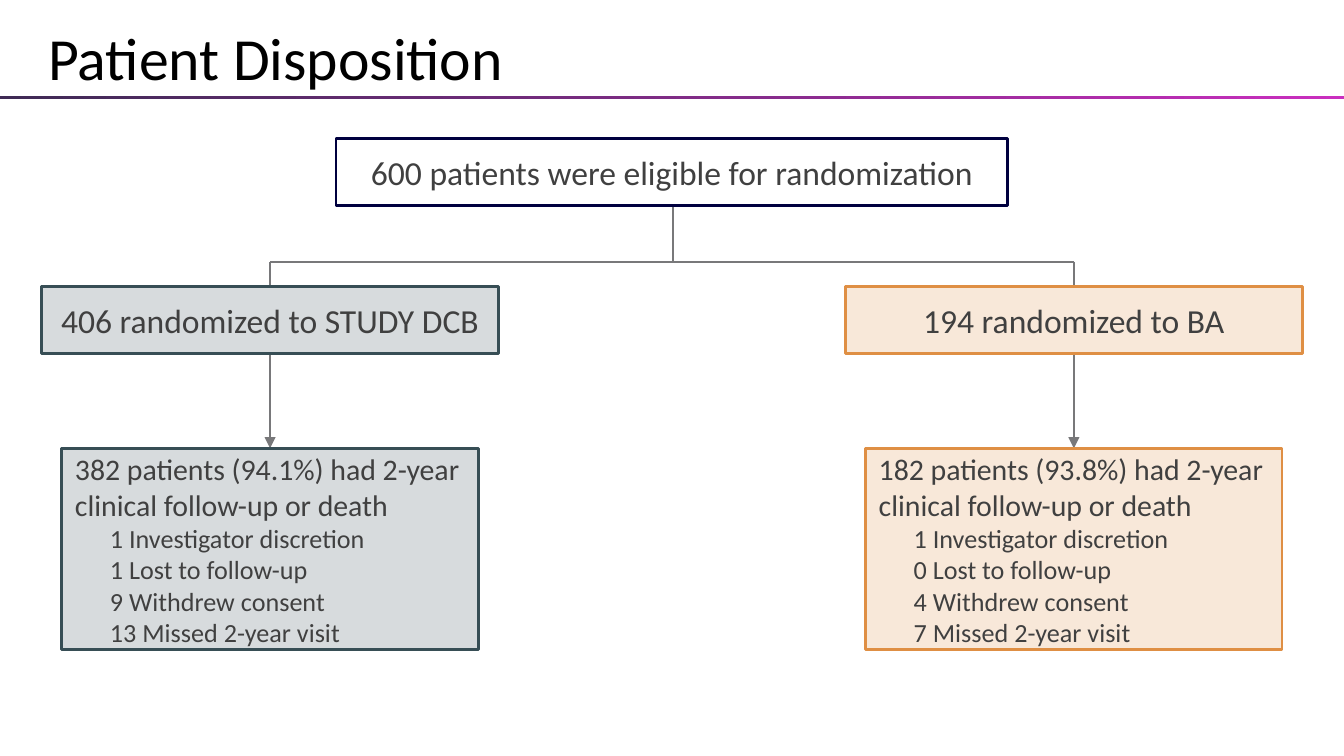
"""Builds the patient disposition flow chart slide."""
from copy import deepcopy

from pptx import Presentation
from pptx import util as u
from pptx.dml.color import RGBColor
from pptx.enum import shapes, text
from pptx.oxml import ns, xmlchemy

BLACK = RGBColor(0x00, 0x00, 0x00)
GREY_TEXT = RGBColor(0x40, 0x40, 0x40)
GREY_LINE = RGBColor(0x78, 0x78, 0x7A)
NAVY = RGBColor(0x00, 0x00, 0x3F)
SLATE = RGBColor(0x37, 0x4E, 0x55)
ORANGE = RGBColor(0xDF, 0x8F, 0x44)
RULE_STOPS = [
    (0, RGBColor(0x3F, 0x2A, 0x55)),
    (0.55, RGBColor(0x85, 0x2C, 0x8A)),
    (1, RGBColor(0xCA, 0x2E, 0xBF)),
]
WIDTH, HEIGHT = 720, 405
CENTER, ARM_OFFSET = 360, 215.3
BOX_H, TOP_Y, BRANCH_Y, ARM_Y, FOLLOW_Y = 36, 74.2, 140.2, 153.4, 240.2
ARMS = [
    (-1, SLATE, "406 randomized to STUDY DCB",
     "382 patients (94.1%) had 2-year clinical follow-up or death", (1, 1, 9, 13)),
    (1, ORANGE, "194 randomized to BA",
     "182 patients (93.8%) had 2-year clinical follow-up or death", (1, 0, 4, 7)),
]
REASONS = ("Investigator discretion", "Lost to follow-up", "Withdrew consent", "Missed 2-year visit")


def apply(target, values):
    for name, value in values.items():
        setattr(target, name, value)


class FlowSlide:
    def __init__(self, prs, font="Calibri"):
        self.s = prs.slides.add_slide(prs.slide_layouts[6])
        self.font = font

    def paragraph(self, p, wording, size, color=GREY_TEXT, indent=0, **fmt):
        if indent:
            p._p.get_or_add_pPr().set("marL", str(u.Pt(indent)))
        apply(p, fmt)
        r = p.add_run()
        r.text = wording
        apply(r.font, {"name": self.font, "size": u.Pt(size)})
        r.font.color.rgb = color

    def title(self, wording, x, y, w, h):
        sp = self.s.shapes.add_textbox(u.Pt(x), u.Pt(y), u.Pt(w), u.Pt(h))
        tf = sp.text_frame
        apply(tf, {"word_wrap": True, "vertical_anchor": text.MSO_ANCHOR.BOTTOM})
        self.paragraph(tf.paragraphs[0], wording, 32, BLACK, line_spacing=0.85)

    def rect(self, x, y, w, h):
        sp = self.s.shapes.add_shape(
            shapes.MSO_SHAPE.RECTANGLE, u.Pt(x), u.Pt(y), u.Pt(w), u.Pt(h))
        sp.shadow.inherit = False
        return sp

    def rule(self, y, h, stops):
        sp = self.rect(0, y, WIDTH, h)
        sp.line.fill.background()
        sp.fill.gradient()
        sp.fill.gradient_angle = 0
        first = sp._element.spPr.find(".//" + ns.qn("a:gs"))
        first.addnext(deepcopy(first))
        for stop, (position, color) in zip(sp.fill.gradient_stops, stops):
            stop.position = position
            stop.color.rgb = color

    def box(self, center, y, w, h, color, tinted=True):
        sp = self.rect(center - w / 2, y, w, h)
        apply(sp.line, {"width": u.Pt(1.5)})
        sp.line.color.rgb = color
        if tinted:
            sp.fill.solid()
            sp.fill.fore_color.rgb = color
            clr = sp._element.spPr.find(ns.qn("a:solidFill"))[0]
            alpha = xmlchemy.OxmlElement("a:alpha")
            alpha.set("val", "20000")
            clr.append(alpha)
        else:
            sp.fill.background()
        tf = sp.text_frame
        apply(tf, {"word_wrap": True, "vertical_anchor": text.MSO_ANCHOR.MIDDLE})
        return tf

    def heading_box(self, wording, center, y, w, color, tinted=True):
        tf = self.box(center, y, w, BOX_H, color, tinted)
        self.paragraph(tf.paragraphs[0], wording, 18, alignment=text.PP_ALIGN.CENTER)

    def follow_up_box(self, wording, counts, center, color):
        tf = self.box(center, FOLLOW_Y, 223.2, 108, color)
        left = {"alignment": text.PP_ALIGN.LEFT}
        self.paragraph(tf.paragraphs[0], wording, 16, **left)
        for count, reason in zip(counts, REASONS):
            self.paragraph(tf.add_paragraph(), f"{count} {reason}", 14, indent=18.7, **left)

    def line(self, x1, y1, x2, y2, arrow=False):
        sp = self.s.shapes.add_connector(
            shapes.MSO_CONNECTOR.STRAIGHT, u.Pt(x1), u.Pt(y1), u.Pt(x2), u.Pt(y2))
        sp.line.color.rgb = GREY_LINE
        sp.line.width = u.Pt(1)
        if arrow:
            tail = xmlchemy.OxmlElement("a:tailEnd")
            tail.set("type", "triangle")
            sp._element.spPr.find(ns.qn("a:ln")).append(tail)
        sp._element.spPr.append(xmlchemy.OxmlElement("a:effectLst"))


def main():
    prs = Presentation()
    apply(prs, {"slide_width": u.Pt(WIDTH), "slide_height": u.Pt(HEIGHT)})
    s = FlowSlide(prs)
    s.rule(51.4, 1.5, RULE_STOPS)
    s.title("Patient Disposition", 18.7, 2.9, 626.4, 50.4)
    s.line(CENTER + 0.5, TOP_Y + BOX_H, CENTER + 0.5, BRANCH_Y)
    s.line(CENTER - ARM_OFFSET, BRANCH_Y, CENTER + ARM_OFFSET, BRANCH_Y)
    s.heading_box("600 patients were eligible for randomization", CENTER, TOP_Y, 360, NAVY, False)
    for side, color, arm, follow_up, counts in ARMS:
        center = CENTER + side * ARM_OFFSET
        s.line(center, BRANCH_Y, center, ARM_Y)
        s.line(center, ARM_Y + BOX_H, center, FOLLOW_Y, arrow=True)
        s.heading_box(arm, center, ARM_Y, 244.8, color)
        s.follow_up_box(follow_up, counts, center, color)
    prs.save("out.pptx")


if __name__ == "__main__":
    main()
